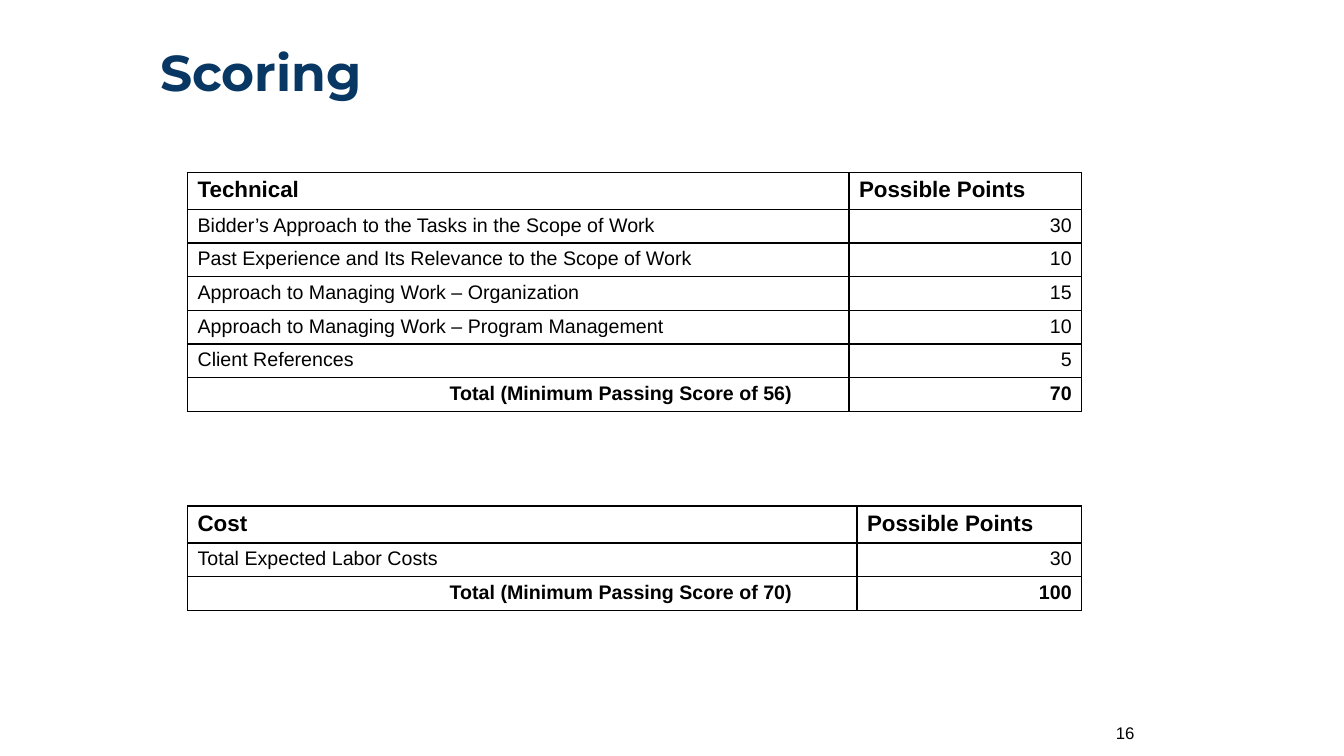
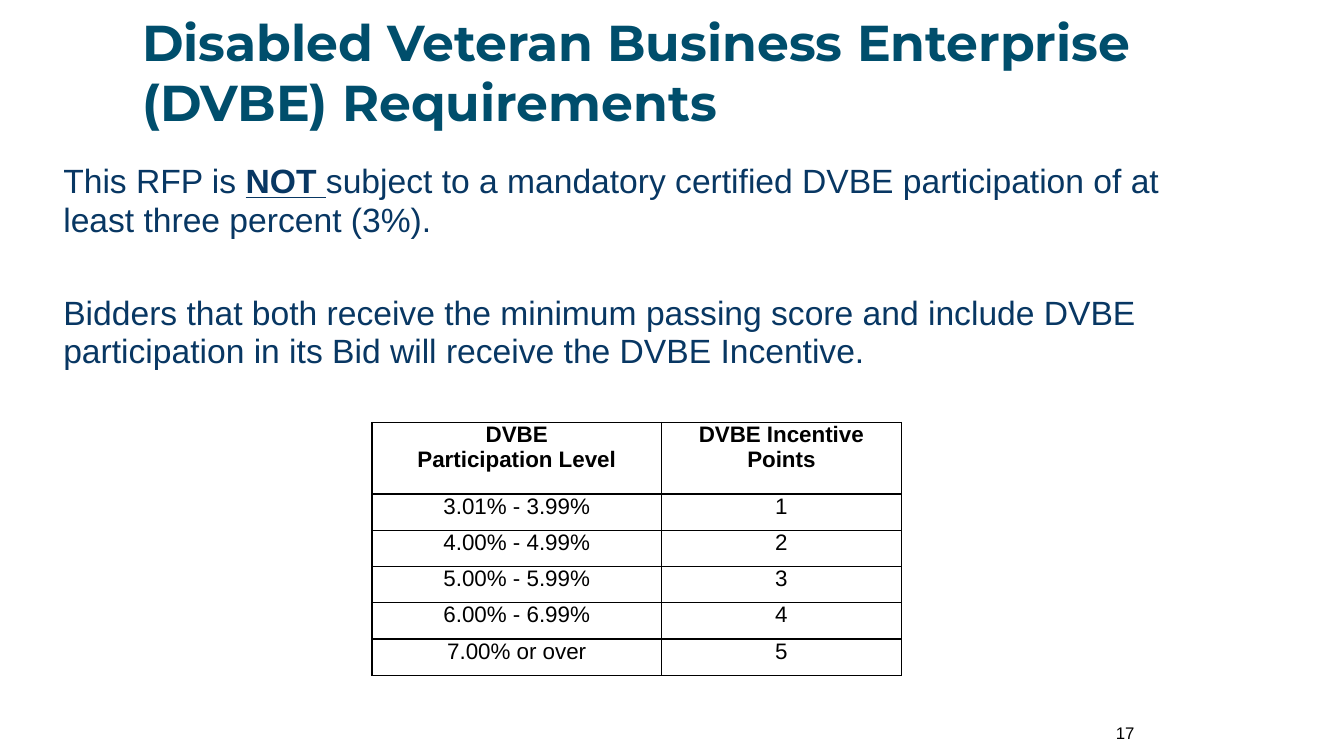
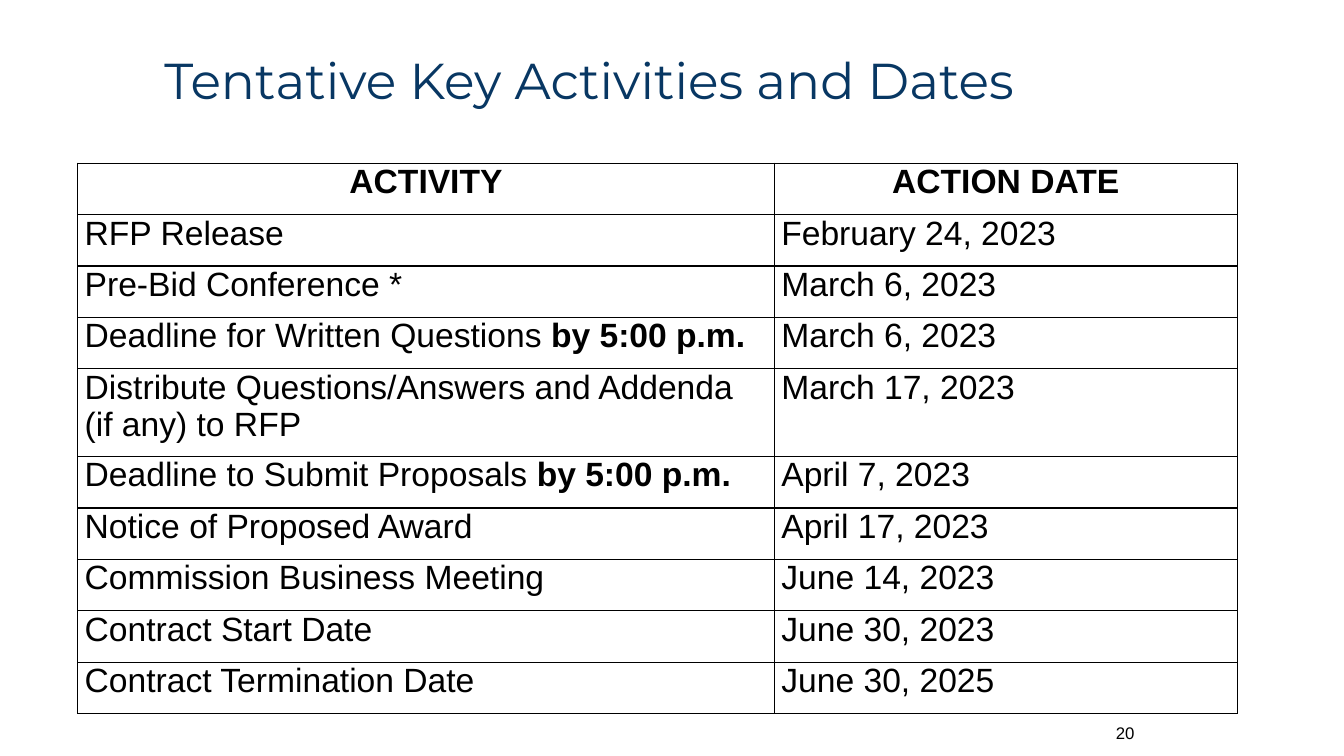
import pptx
import pptx.util
import pptx.dml.color
import pptx.enum.text
import pptx.oxml
import pptx.oxml.ns

Inches = pptx.util.Inches
Pt = pptx.util.Pt
ALIGN = pptx.enum.text.PP_ALIGN
ANCHOR = pptx.enum.text.MSO_ANCHOR

NAVY = pptx.dml.color.RGBColor(0x08, 0x37, 0x63)
TEAL = pptx.dml.color.RGBColor(0x00, 0x4E, 0x6C)
BLACK = pptx.dml.color.RGBColor(0, 0, 0)

TITLE_FONT = "Montserrat"
BODY_FONT = "Arial"
TITLE_SIZE = (10.89, 1.14)
NUMBER_BOX = (9.42, 7.07, 1.93, 0.4)
TIGHT = (0.07, 0)
ROOMY = (0.1, 0.05)
DEADLINE = ("by 5:00 p.m.", {"bold": True})


def write_text(frame, paragraphs, size=14, font=BODY_FONT, color=BLACK, bold=False,
               align=ALIGN.LEFT, line=None, before=0, after=0, indent=0):
    """Fill a frame; a paragraph is a string or a list of (text, emphasis) spans."""
    if isinstance(paragraphs, str):
        paragraphs = [paragraphs]
    for index, content in enumerate(paragraphs):
        para = frame.paragraphs[0] if index == 0 else frame.add_paragraph()
        para.alignment = align
        para.space_before = Pt(before if index else 0)
        para.space_after = Pt(after)
        if line:
            para.line_spacing = line
        if indent:
            properties = para._p.get_or_add_pPr()
            properties.set("marL", str(Inches(indent)))
            properties.set("indent", "0")
        spans = [(content, {})] if isinstance(content, str) else content
        for text, emphasis in spans:
            span = para.add_run()
            span.text = text
            span.font.name = font
            span.font.size = Pt(size)
            span.font.color.rgb = color
            span.font.bold = emphasis.get("bold", bold)
            span.font.underline = emphasis.get("underline", False)


def add_text_box(page, bounds, paragraphs, anchor=ANCHOR.TOP, **style):
    box = page.shapes.add_textbox(*map(Inches, bounds))
    box.text_frame.word_wrap = True
    box.text_frame.vertical_anchor = anchor
    write_text(box.text_frame, paragraphs, **style)


def add_page(deck, title, left, top, number, color=NAVY, bold=True, line=0.9):
    """Start a slide with its title and page number."""
    page = deck.slides.add_slide(deck.slide_layouts[5])
    box = page.shapes.title
    box.left, box.top = Inches(left), Inches(top)
    box.width, box.height = map(Inches, TITLE_SIZE)
    frame = box.text_frame
    frame.word_wrap = True
    frame.auto_size = pptx.enum.text.MSO_AUTO_SIZE.NONE
    frame.vertical_anchor = ANCHOR.MIDDLE
    write_text(frame, title, size=36, font=TITLE_FONT, color=color, bold=bold, line=line)
    add_text_box(page, NUMBER_BOX, str(number), anchor=ANCHOR.MIDDLE,
                 size=12, align=ALIGN.RIGHT)
    return page


def outline_cell(cell):
    properties = cell._tc.get_or_add_tcPr()
    for index, side in enumerate(("lnL", "lnR", "lnT", "lnB")):
        border = pptx.oxml.parse_xml(
            f'<a:{side} {pptx.oxml.ns.nsdecls("a")} w="{Pt(1)}">'
            f'<a:solidFill><a:srgbClr val="{BLACK}"/></a:solidFill></a:{side}>')
        properties.insert(index, border)


def add_grid(page, left, top, widths, heights, rows, styles, insets):
    """Draw a ruled table; styles(row, column) gives the text format of a cell."""
    table = page.shapes.add_table(
        len(rows), len(widths), Inches(left), Inches(top),
        Inches(sum(widths)), Inches(sum(heights))).table
    table.first_row = table.horz_banding = False
    for column, width in zip(table.columns, widths):
        column.width = Inches(width)
    for row, height in zip(table.rows, heights):
        row.height = Inches(height)
    for r, values in enumerate(rows):
        for c, value in enumerate(values):
            cell = table.cell(r, c)
            cell.margin_left = cell.margin_right = Inches(insets[0])
            cell.margin_top = cell.margin_bottom = Inches(insets[1])
            cell.fill.background()
            outline_cell(cell)
            write_text(cell.text_frame, value, **styles(r, c))


def add_score_table(page, top, widths, name, criteria, total):
    rows = [(name, "Possible Points"), *criteria, total]

    def styles(r, c):
        if r == 0:
            return {"size": 16, "bold": True}
        is_total = r == len(rows) - 1
        return {"bold": is_total,
                "align": ALIGN.RIGHT if c else ALIGN.LEFT,
                "indent": 2.5 if is_total and c == 0 else 0}

    heights = [0.35] + [0.32] * (len(rows) - 1)
    add_grid(page, 1.86, top, widths, heights, rows, styles, ROOMY)


def add_scoring(deck):
    page = add_page(deck, "Scoring", 1.49, 0.18, 16)
    add_score_table(page, 1.71, (6.56, 2.31), "Technical", [
        ("Bidder’s Approach to the Tasks in the Scope of Work", "30"),
        ("Past Experience and Its Relevance to the Scope of Work", "10"),
        ("Approach to Managing Work – Organization", "15"),
        ("Approach to Managing Work – Program Management", "10"),
        ("Client References", "5"),
    ], ("Total (Minimum Passing Score of 56)", "70"))
    add_score_table(page, 5.02, (6.64, 2.23), "Cost", [
        ("Total Expected Labor Costs", "30"),
    ], ("Total (Minimum Passing Score of 70)", "100"))


def add_incentive(deck):
    page = add_page(deck, "Disabled Veteran Business Enterprise (DVBE) Requirements",
                    1.31, 0.14, 17, color=TEAL, line=1.0)
    # Incentive points by participation level
    levels = ["3.01% - 3.99%", "4.00% - 4.99%", "5.00% - 5.99%",
              "6.00% - 6.99%", "7.00% or over"]
    rows = [(["DVBE", "Participation Level"], ["DVBE Incentive", "Points"])]
    rows += [(level, str(points)) for points, level in enumerate(levels, 1)]
    add_grid(page, 3.69, 4.19, (2.87, 2.38), [0.71] + [0.36] * len(levels), rows,
             lambda r, c: {"size": 16, "bold": r == 0, "align": ALIGN.CENTER}, TIGHT)
    # Requirement statement
    add_text_box(page, (0.53, 1.57, 11.74, 2.5), [
        [("This RFP is ", {}),
         ("NOT ", {"bold": True, "underline": True}),
         ("subject to a mandatory certified DVBE participation of "
          "at least three percent (3%).", {})],
        "Bidders that both receive the minimum passing score and include DVBE "
        "participation in its Bid will receive the DVBE Incentive.",
    ], size=24, color=NAVY, line=0.95, before=39)


def add_schedule(deck):
    page = add_page(deck, "Tentative Key Activities and Dates", 1.53, 0.26, 20, bold=False)
    rows = [
        ("ACTIVITY", "ACTION DATE"),
        ("RFP Release", "February 24, 2023"),
        ("Pre-Bid Conference *", "March 6, 2023"),
        ([[("Deadline for Written Questions ", {}), DEADLINE]], "March 6, 2023"),
        ("Distribute Questions/Answers and Addenda (if any) to RFP", "March 17, 2023"),
        ([[("Deadline to Submit Proposals ", {}), DEADLINE]], "April 7, 2023"),
        ("Notice of Proposed Award", "April 17, 2023"),
        ("Commission Business Meeting", "June 14, 2023"),
        ("Contract Start Date", "June 30, 2023"),
        ("Contract Termination Date", "June 30, 2025"),
    ]

    def styles(r, c):
        return {"size": 24, "bold": r == 0,
                "align": ALIGN.LEFT if r else ALIGN.CENTER,
                "after": 3 if r and c else 6}

    heights = [0.87 if r == 4 else 0.51 for r in range(len(rows))]
    add_grid(page, 0.77, 1.62, (6.91, 4.59), heights, rows, styles, TIGHT)


def main():
    deck = pptx.Presentation()
    deck.slide_width, deck.slide_height = Inches(13.33), Inches(7.5)
    add_scoring(deck)
    add_incentive(deck)
    add_schedule(deck)
    deck.save("out.pptx")


if __name__ == "__main__":
    main()
